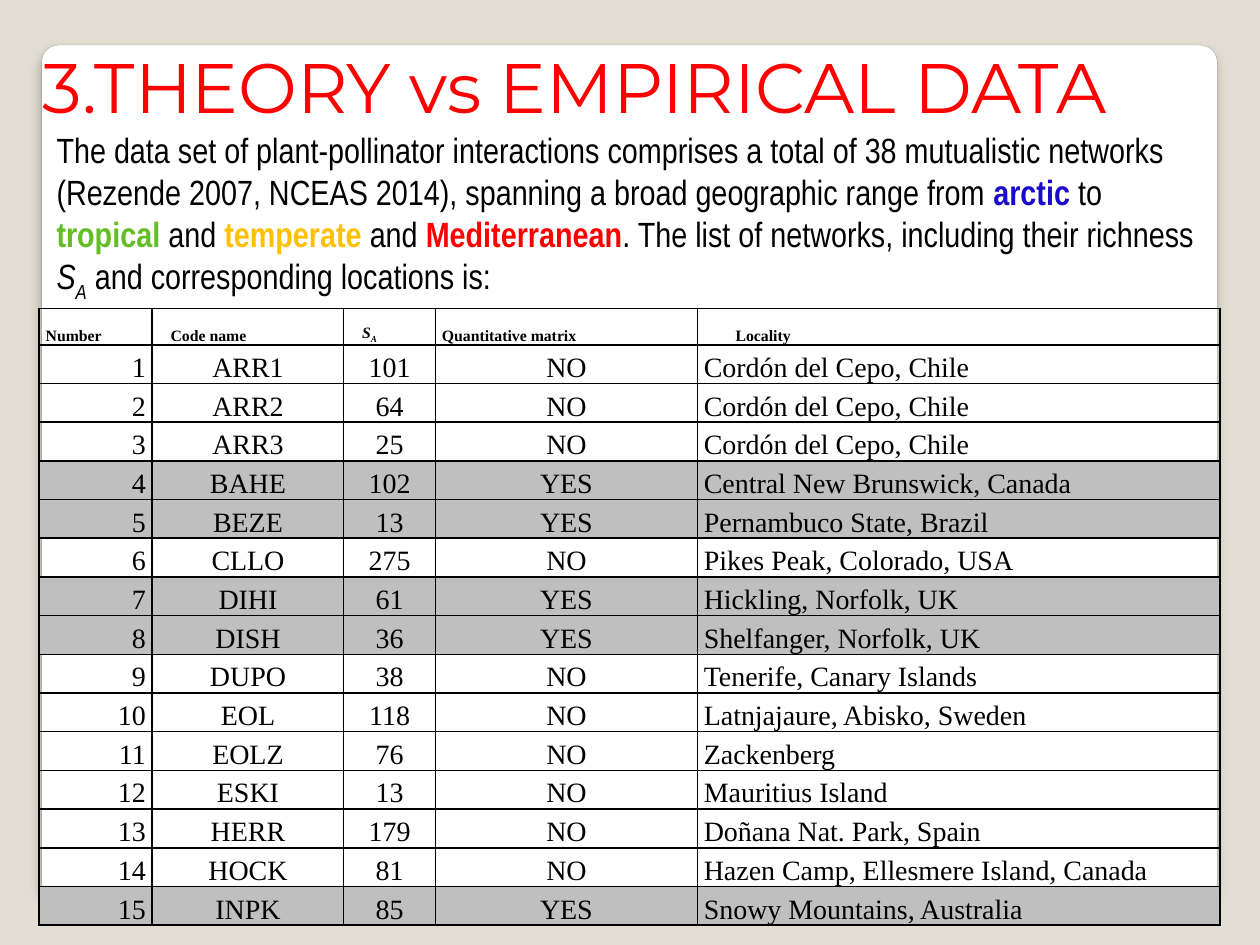
from typing import NamedTuple

from lxml.etree import SubElement
from pptx import Presentation
from pptx.dml.color import RGBColor
from pptx.enum.shapes import MSO_SHAPE as Shape
from pptx.enum.text import MSO_ANCHOR as Anchor, MSO_AUTO_SIZE as AutoSize, PP_ALIGN as Align
from pptx.oxml.ns import qn
from pptx.util import Cm, Pt

COLORS = {
    "background": "E3DED1", "panel": "FFFFFF", "panel_edge": "DADADA", "panel_line": "A4A4A4",
    "text": "000000", "title": "FF0000", "shaded": "BFBFBF", "arctic": "1A0CCA",
    "tropical": "62BE24", "temperate": "FFC000", "mediterranean": "FF0000",
}
TABLE_FONT = "Times New Roman"
CELL_MARGIN = 0.13


class Span(NamedTuple):
    text: str
    color: str = "text"
    bold: bool = False
    italic: bool = False
    baseline: int = 0


class Column(NamedTuple):
    spans: list[Span]
    width: float
    align: Align
    header_indent: float = 0


class Network(NamedTuple):
    code: str
    richness: int
    quantitative: str
    locality: str


INTRODUCTION = [
    Span("The data set of plant-pollinator interactions comprises a total of 38 mutualistic "
         "networks (Rezende 2007, NCEAS 2014), spanning a broad geographic range from "),
    Span("arctic", "arctic", bold=True),
    Span(" to "),
    Span("tropical ", "tropical", bold=True),
    Span("and "),
    Span("temperate", "temperate", bold=True),
    Span(" and "),
    Span("Mediterranean", "mediterranean", bold=True),
    Span(". The list of networks, including their richness "),
    Span("S", italic=True),
    Span("A", italic=True, baseline=-30),
    Span(" and corresponding locations is:"),
]
COLUMNS = [
    Column([Span("Number", bold=True)], 2.28, Align.RIGHT),
    Column([Span("Code name", bold=True)], 3.86, Align.CENTER, 0.24),
    Column([Span("S", bold=True, italic=True), Span("A", bold=True, italic=True, baseline=-25)],
           1.85, Align.CENTER, 0.24),
    Column([Span("Quantitative matrix", bold=True)], 5.28, Align.CENTER),
    Column([Span("Locality", bold=True)], 10.54, Align.LEFT, 0.64),
]
NETWORKS = [
    Network("ARR1", 101, "NO", "Cordón del Cepo, Chile"),
    Network("ARR2", 64, "NO", "Cordón del Cepo, Chile"),
    Network("ARR3", 25, "NO", "Cordón del Cepo, Chile"),
    Network("BAHE", 102, "YES", "Central New Brunswick, Canada"),
    Network("BEZE", 13, "YES", "Pernambuco State, Brazil"),
    Network("CLLO", 275, "NO", "Pikes Peak, Colorado, USA"),
    Network("DIHI", 61, "YES", "Hickling, Norfolk, UK"),
    Network("DISH", 36, "YES", "Shelfanger, Norfolk, UK"),
    Network("DUPO", 38, "NO", "Tenerife, Canary Islands"),
    Network("EOL", 118, "NO", "Latnjajaure, Abisko, Sweden"),
    Network("EOLZ", 76, "NO", "Zackenberg"),
    Network("ESKI", 13, "NO", "Mauritius Island"),
    Network("HERR", 179, "NO", "Doñana Nat. Park, Spain"),
    Network("HOCK", 81, "NO", "Hazen Camp, Ellesmere Island, Canada"),
    Network("INPK", 85, "YES", "Snowy Mountains, Australia"),
]


def rgb(name: str) -> RGBColor:
    return RGBColor.from_string(COLORS[name])


def write_spans(paragraph, spans: list[Span], font_name: str, size: float) -> None:
    paragraph.font.name = font_name
    paragraph.font.size = Pt(size)
    for span in spans:
        run = paragraph.add_run()
        run.text = span.text
        run.font.name = font_name
        run.font.size = Pt(size)
        run.font.bold = span.bold
        run.font.italic = span.italic
        run.font.color.rgb = rgb(span.color)
        if span.baseline:
            run.font._element.set("baseline", str(span.baseline * 1000))


def add_panel(slide) -> None:
    panel = slide.shapes.add_shape(Shape.ROUNDED_RECTANGLE, Cm(0.84), Cm(0.91), Cm(23.7), Cm(17.22))
    panel.adjustments[0] = 0.02
    panel.fill.gradient()
    panel.fill.gradient_angle = 270
    for stop, position, color in zip(panel.fill.gradient_stops, (0.98, 1), ("panel", "panel_edge")):
        stop.position = position
        stop.color.rgb = rgb(color)
    panel.line.color.rgb = rgb("panel_line")
    panel.line.width = Pt(0.16)
    panel.shadow.inherit = False
    effects = panel._element.spPr.find(qn("a:effectLst"))
    shadow = SubElement(effects, qn("a:outerShdw"), blurRad=str(Pt(6)), dist=str(Pt(4)),
                        dir="5400000", rotWithShape="0")
    shadow_color = SubElement(shadow, qn("a:srgbClr"), val=COLORS["text"])
    SubElement(shadow_color, qn("a:alpha"), val="25000")
    slide.shapes._spTree.insert(2, panel._element)


def add_title(slide) -> None:
    title = slide.shapes.title
    title.left, title.top, title.width, title.height = Cm(0.61), Cm(0.76), Cm(24.41), Cm(1.96)
    frame = title.text_frame
    frame.vertical_anchor = Anchor.TOP
    frame.auto_size = AutoSize.SHAPE_TO_FIT_TEXT
    paragraph = frame.paragraphs[0]
    paragraph.alignment = Align.LEFT
    write_spans(paragraph, [Span("3.THEORY vs EMPIRICAL DATA", "title")], "Montserrat", 40)


def add_introduction(slide) -> None:
    box = slide.shapes.add_textbox(Cm(0.89), Cm(2.51), Cm(23.6), Cm(3.68))
    frame = box.text_frame
    frame.word_wrap = True
    frame.auto_size = AutoSize.SHAPE_TO_FIT_TEXT
    frame.vertical_anchor = Anchor.MIDDLE
    write_spans(frame.paragraphs[0], INTRODUCTION, "Arial Narrow", 20)


def format_cell(cell, spans: list[Span], size: float, align: Align, indent: float, shaded: bool) -> None:
    cell.vertical_anchor = Anchor.BOTTOM
    cell.margin_left, cell.margin_right = Cm(CELL_MARGIN + indent), Cm(CELL_MARGIN)
    cell.margin_top = cell.margin_bottom = 0
    paragraph = cell.text_frame.paragraphs[0]
    paragraph.alignment = align
    paragraph.line_spacing = 1.15
    write_spans(paragraph, spans, TABLE_FONT, size)
    properties = cell._tc.get_or_add_tcPr()
    for side in ("lnL", "lnR", "lnT", "lnB"):
        border = SubElement(properties, qn(f"a:{side}"), w=str(Pt(1)))
        border_fill = SubElement(border, qn("a:solidFill"))
        SubElement(border_fill, qn("a:srgbClr"), val=COLORS["text"])
    if shaded:
        cell.fill.solid()
        cell.fill.fore_color.rgb = rgb("shaded")
    else:
        cell.fill.background()


def add_network_table(slide) -> None:
    header_height, row_height = 0.73, 0.78
    width = sum(column.width for column in COLUMNS)
    height = header_height + row_height * len(NETWORKS)
    frame = slide.shapes.add_table(len(NETWORKS) + 1, len(COLUMNS), Cm(0.79), Cm(6.22), Cm(width), Cm(height))
    table = frame.table
    table.first_row = table.horz_banding = False
    for index, row in enumerate(table.rows):
        row.height = Cm(row_height if index else header_height)
    for index, column in enumerate(COLUMNS):
        table.columns[index].width = Cm(column.width)
        format_cell(table.cell(0, index), column.spans, 9, Align.LEFT, column.header_indent, False)
        for number, network in enumerate(NETWORKS, 1):
            value = str((number, *network)[index])
            format_cell(table.cell(number, index), [Span(value)], 16, column.align, 0,
                        network.quantitative == "YES")


def main() -> None:
    presentation = Presentation()
    presentation.slide_width, presentation.slide_height = Cm(25.4), Cm(19.05)
    slide = presentation.slides.add_slide(presentation.slide_layouts[5])
    slide.background.fill.solid()
    slide.background.fill.fore_color.rgb = rgb("background")
    add_panel(slide)
    add_title(slide)
    add_network_table(slide)
    add_introduction(slide)
    presentation.save("out.pptx")


if __name__ == "__main__":
    main()
